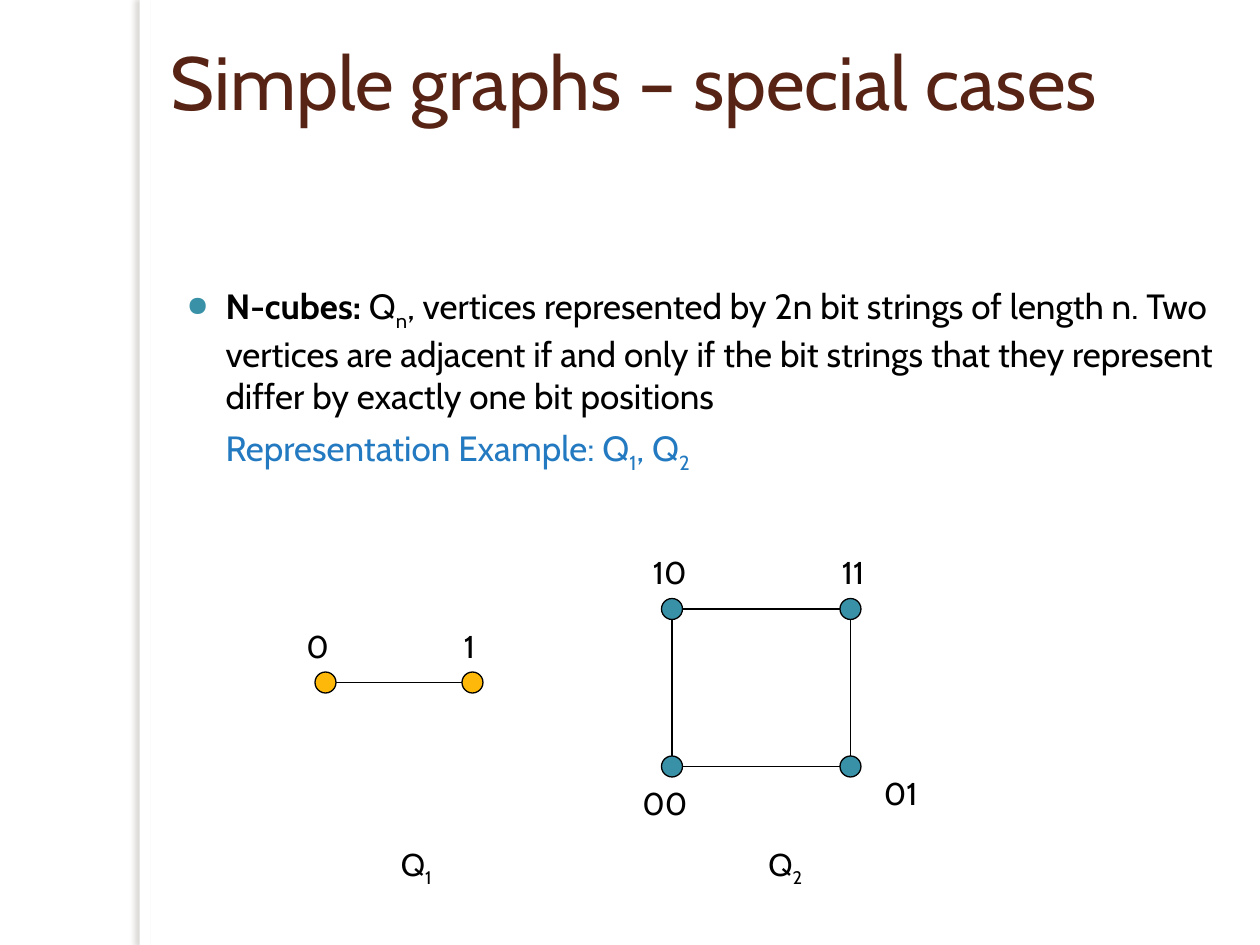
from lxml import etree
from pptx import Presentation
from pptx import util as u
from pptx.dml.color import RGBColor
from pptx.enum import shapes, text
from pptx.oxml.ns import qn

PX = 7620  # EMU per px, 120 px to the inch
FONT = "Cabin"
WHITE = RGBColor(0xFF, 0xFF, 0xFF)
BLACK = RGBColor(0x00, 0x00, 0x00)
BROWN = RGBColor(0x57, 0x23, 0x14)
BLUE = RGBColor(0x23, 0x7A, 0xC1)
TEAL = RGBColor(0x38, 0x91, 0xA7)
AMBER = RGBColor(0xFE, 0xB8, 0x0A)


def add_run(p, txt, size=20, color=BLACK, bold=False, sub=False):
    r = p.add_run()
    r.text = txt
    r.font.name = FONT
    r.font.size = u.Pt(size)
    r.font.color.rgb = color
    r.font.bold = bold
    if sub:
        r.font._element.set("baseline", "-25000")


def add_box(kind, x, y, w, h, fill, line=None):
    sp = s.shapes.add_shape(kind, x * PX, y * PX, w * PX, h * PX)
    sp.shadow.inherit = False
    sp.fill.solid()
    sp.fill.fore_color.rgb = fill
    if line is None:
        sp.line.fill.background()
    else:
        sp.line.color.rgb = line
        sp.line.width = u.Pt(0.75)
    return sp


prs = Presentation()
prs.slide_width, prs.slide_height = 1200 * PX, 900 * PX
s = prs.slides.add_slide(prs.slide_layouts[6])
RECT, OVAL = shapes.MSO_SHAPE.RECTANGLE, shapes.MSO_SHAPE.OVAL

# Side strip with a soft shadow to the left
strip = add_box(RECT, 133, 0, 10, 900, WHITE)
effects = strip._element.spPr.find(qn("a:effectLst"))
shadow = etree.SubElement(effects, qn("a:outerShdw"), blurRad="38100", dist="38100",
                          dir="10800000", algn="tl", rotWithShape="0")
tint = etree.SubElement(shadow, qn("a:srgbClr"), val="736F63")
etree.SubElement(tint, qn("a:alpha"), val="25000")

# Title
tf = s.shapes.add_textbox(151 * PX, 28 * PX, 1022 * PX, 192 * PX).text_frame
tf.word_wrap = True
add_run(tf.paragraphs[0], "Simple graphs – special cases", size=43, color=BROWN)

# Definition, bulleted
tf = s.shapes.add_textbox(155 * PX, 265 * PX, 1020 * PX, 245 * PX).text_frame
tf.word_wrap = True
p = tf.paragraphs[0]
pPr = p._p.get_or_add_pPr()
pPr.set("marL", str(48 * PX))
pPr.set("indent", str(-37 * PX))
bullet = etree.SubElement(pPr, qn("a:buClr"))
etree.SubElement(bullet, qn("a:srgbClr"), val=str(TEAL))
etree.SubElement(pPr, qn("a:buSzPct"), val="80000")
etree.SubElement(pPr, qn("a:buChar"), char="●")
add_run(p, "N-cubes:", bold=True)
add_run(p, " Q")
add_run(p, "n", sub=True)
add_run(p, ", vertices represented by 2n bit strings of length n. Two vertices are "
           "adjacent if and only if the bit strings that they represent differ by "
           "exactly one bit positions")

# Example line, aligned with the bullet text
p = tf.add_paragraph()
p._p.get_or_add_pPr().set("marL", str(48 * PX))
p.space_before = u.Pt(6)
for txt, sub in [("Representation Example: Q", False), ("1", True), (", Q", False), ("2", True)]:
    add_run(p, txt, color=BLUE, sub=sub)

# Vertices
NODE, HALF = 20, 10
LEFT, RIGHT, TOP, BOTTOM = 630, 800, 570, 720
q1 = [(300, 640), (440, 640)]
q2 = [(LEFT, TOP), (RIGHT, TOP), (RIGHT, BOTTOM), (LEFT, BOTTOM)]
for nodes, color in [(q1, AMBER), (q2, TEAL)]:
    for x, y in nodes:
        add_box(OVAL, x, y, NODE, NODE, color, BLACK)

# Edges, from rim to rim
edges = [q1] + [sorted([q2[i], q2[(i + 1) % 4]]) for i in range(4)]
for (x1, y1), (x2, y2) in edges:
    dx, dy = (HALF, 0) if y1 == y2 else (0, HALF)
    c = s.shapes.add_connector(shapes.MSO_CONNECTOR.STRAIGHT,
                               (x1 + HALF + dx) * PX, (y1 + HALF + dy) * PX,
                               (x2 + HALF - dx) * PX, (y2 + HALF - dy) * PX)
    c.line.color.rgb = BLACK
    c.line.width = u.Pt(0.75)
    etree.SubElement(c._element.spPr, qn("a:effectLst"))

# Vertex labels and graph names
labels = [
    (280, 600, "0", ""), (430, 600, "1", ""),
    (610, 530, "10", ""), (790, 530, "11", ""),
    (600, 750, "00", ""), (830, 740, "01", ""),
    (370, 810, "Q", "1"), (720, 810, "Q", "2"),
]
for x, y, txt, sub in labels:
    tf = add_box(RECT, x, y, 40, 30, WHITE, WHITE).text_frame
    tf.word_wrap = False
    tf.vertical_anchor = text.MSO_ANCHOR.MIDDLE
    p = tf.paragraphs[0]
    p.alignment = text.PP_ALIGN.LEFT
    add_run(p, txt, size=18)
    if sub:
        add_run(p, sub, size=18, sub=True)

prs.save("out.pptx")
